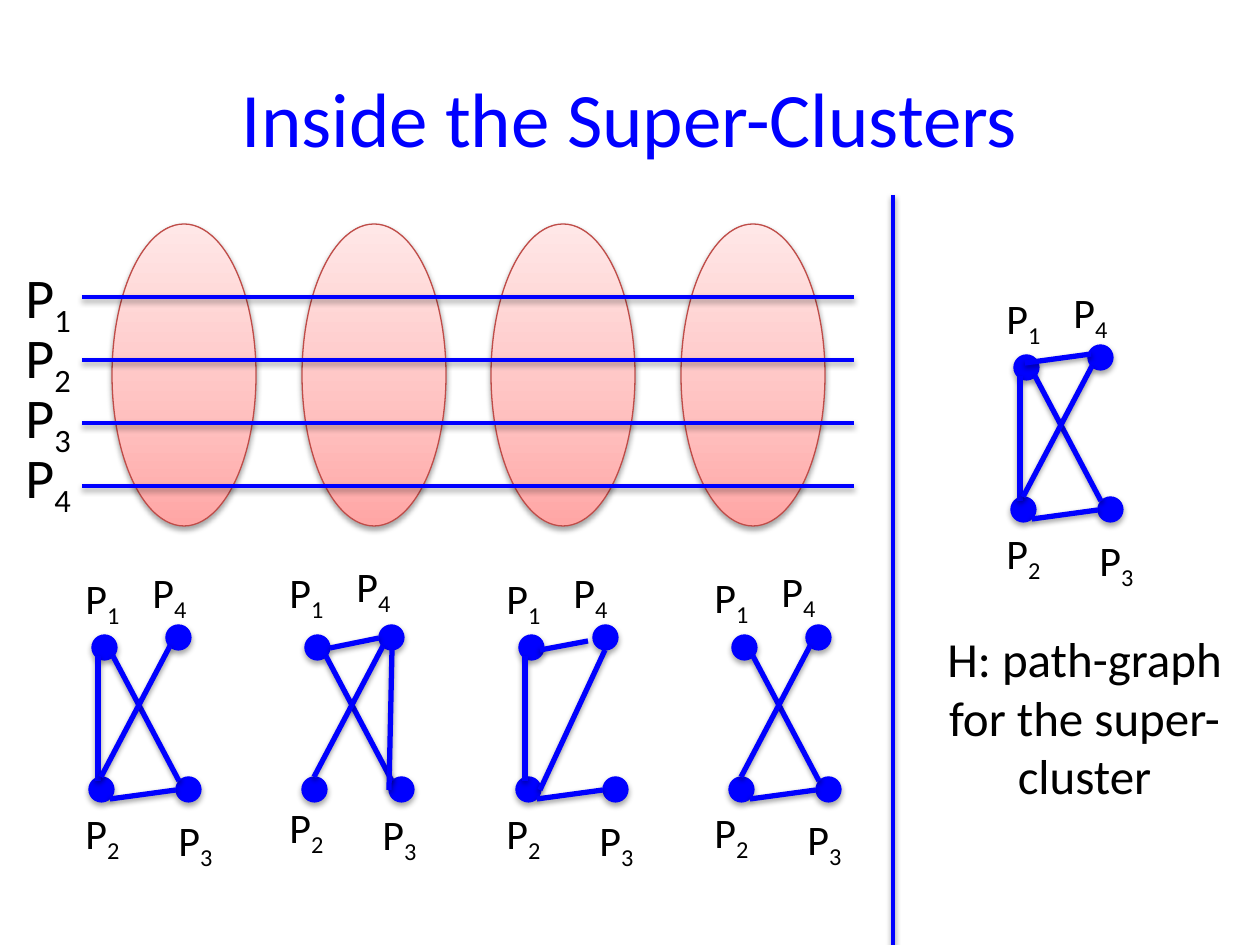
from copy import deepcopy
from dataclasses import dataclass

from pptx import Presentation
from pptx.dml.color import RGBColor
from pptx.enum.shapes import MSO_CONNECTOR, MSO_SHAPE
from pptx.enum.text import MSO_ANCHOR, PP_ALIGN
from pptx.oxml.ns import qn
from pptx.util import Emu, Pt

ELLIPSE = MSO_SHAPE.OVAL
STRAIGHT = MSO_CONNECTOR.STRAIGHT
CENTER = PP_ALIGN.CENTER
MIDDLE = MSO_ANCHOR.MIDDLE


@dataclass(frozen=True)
class Theme:
    font: str = "Calibri"
    blue: str = "0000FF"
    black: str = "000000"
    cluster_line: str = "BF4C48"
    cluster_stops: tuple = ((0, "FFA6A5"), (0.35, "FFC0BF"), (1, "FFE7E7"))
    title_size: int = 44
    path_size: int = 32
    caption_size: int = 28
    node_size: int = 24
    path_width: float = 2
    edge_width: float = 3
    outline_width: float = 0.75


THEME = Theme()
PX_PER_INCH = 126

TITLE = "Inside the Super-Clusters"
CAPTION = "H: path-graph for the super-cluster"
PATHS = ["1", "2", "3", "4"]
CLUSTER_LEFTS = [112, 302, 491, 681]

NODE_OFFSETS = {"1": (0, 0), "2": (-3, 142), "3": (84, 142), "4": (74, -10)}
LABEL_OFFSETS = {"1": (0, 0), "2": (0, 235), "3": (93, 242), "4": (67, -6)}
EDGES = {
    "12": (6, 21, 6, 146),
    "13": (21, 21, 87, 146),
    "14": (25, 13, 74, 3),
    "23": (84, 155, 18, 164),
    "24": (78, 11, 9, 142),
    "34": (84, 155, 87, 15),
}
GRAPHS = [
    {"node": (92, 635), "label": (73, 566), "edges": ["12", "13", "23", "24"]},
    {"node": (305, 635), "label": (277, 560), "edges": ["14", "13", "34", "24"]},
    {"node": (519, 635), "label": (494, 566), "edges": ["12", "23", "24", "14"],
     "moved": {"24": (86, 15, 21, 155), "14": (21, 15, 69, 6)}},
    {"node": (732, 635), "label": (702, 565), "edges": ["13", "23", "24"]},
    {"node": (1014, 355), "label": (994, 286), "edges": ["12", "13", "23", "24", "14"],
     "moved": {"14": (77, -1, 11, 8)}},
]


def px(value):
    return Emu(round(value * 914400 / PX_PER_INCH))


def color(value):
    return RGBColor.from_string(value)


def format_run(run, size, rgb):
    run.font.name = THEME.font
    run.font.size = Pt(size)
    run.font.color.rgb = color(rgb)


def add_line(shapes, ends, width):
    line = shapes.add_connector(STRAIGHT, *map(px, ends))
    line.line.color.rgb = color(THEME.blue)
    line.line.width = Pt(width)


def add_ellipse(shapes, box, line_color):
    ellipse = shapes.add_shape(ELLIPSE, *map(px, box))
    ellipse.line.color.rgb = color(line_color)
    ellipse.line.width = Pt(THEME.outline_width)
    return ellipse


def add_path_label(shapes, left, top, height, number, size):
    box = shapes.add_textbox(*map(px, (left, top, 80, height)))
    paragraph = box.text_frame.paragraphs[0]
    for text in ("P", number):
        run = paragraph.add_run()
        run.text = text
        format_run(run, size, THEME.black)
    run._r.get_or_add_rPr().set("baseline", "-25000")


def add_cluster(shapes, left):
    cluster = add_ellipse(shapes, (left, 224, 144, 302), THEME.cluster_line)
    cluster.fill.gradient()
    cluster.fill.gradient_angle = 90
    stop_list = cluster._element.spPr.find(".//" + qn("a:gsLst"))
    stop_list.insert(1, deepcopy(stop_list[0]))
    for stop, (position, rgb) in zip(cluster.fill.gradient_stops, THEME.cluster_stops):
        stop.position = position
        stop.color.rgb = color(rgb)


def add_graph(shapes, graph):
    left, top = graph["node"]
    for x, y in NODE_OFFSETS.values():
        node = add_ellipse(shapes, (left + x, top + y, 25, 25), THEME.blue)
        node.fill.solid()
        node.fill.fore_color.rgb = color(THEME.blue)
    edges = EDGES | graph.get("moved", {})
    for name in graph["edges"]:
        x1, y1, x2, y2 = edges[name]
        add_line(shapes, (left + x1, top + y1, left + x2, top + y2), THEME.edge_width)
    left, top = graph["label"]
    for number, (x, y) in LABEL_OFFSETS.items():
        add_path_label(shapes, left + x, top + y, 63, number, THEME.node_size)


def place_title(title):
    title.left, title.top, title.width, title.height = map(px, (63, 38, 1134, 157))
    title.text_frame.text = TITLE
    title.text_frame.vertical_anchor = MIDDLE
    paragraph = title.text_frame.paragraphs[0]
    paragraph.alignment = CENTER
    format_run(paragraph.runs[0], THEME.title_size, THEME.blue)


def add_caption(shapes):
    caption = shapes.add_textbox(*map(px, (931, 622, 307, 190)))
    caption.text_frame.word_wrap = True
    caption.text_frame.text = CAPTION
    paragraph = caption.text_frame.paragraphs[0]
    paragraph.alignment = CENTER
    format_run(paragraph.runs[0], THEME.caption_size, THEME.black)


def main():
    presentation = Presentation()
    presentation.slide_width = px(1260)
    presentation.slide_height = px(945)
    slide = presentation.slides.add_slide(presentation.slide_layouts[5])
    shapes = slide.shapes
    place_title(shapes.title)

    for left in CLUSTER_LEFTS:
        add_cluster(shapes, left)
    path_labels = shapes.add_group_shape().shapes
    for row, number in enumerate(PATHS):
        y = 297 + 63 * row
        add_line(shapes, (82, y, 854, y), THEME.path_width)
        add_path_label(path_labels, 13, 256 + 60 * row, 80, number, THEME.path_size)
    add_line(shapes, (893, 195, 893, 945), THEME.path_width)

    for graph in GRAPHS:
        add_graph(shapes.add_group_shape().shapes, graph)
    add_caption(shapes)
    presentation.save("out.pptx")


if __name__ == "__main__":
    main()
